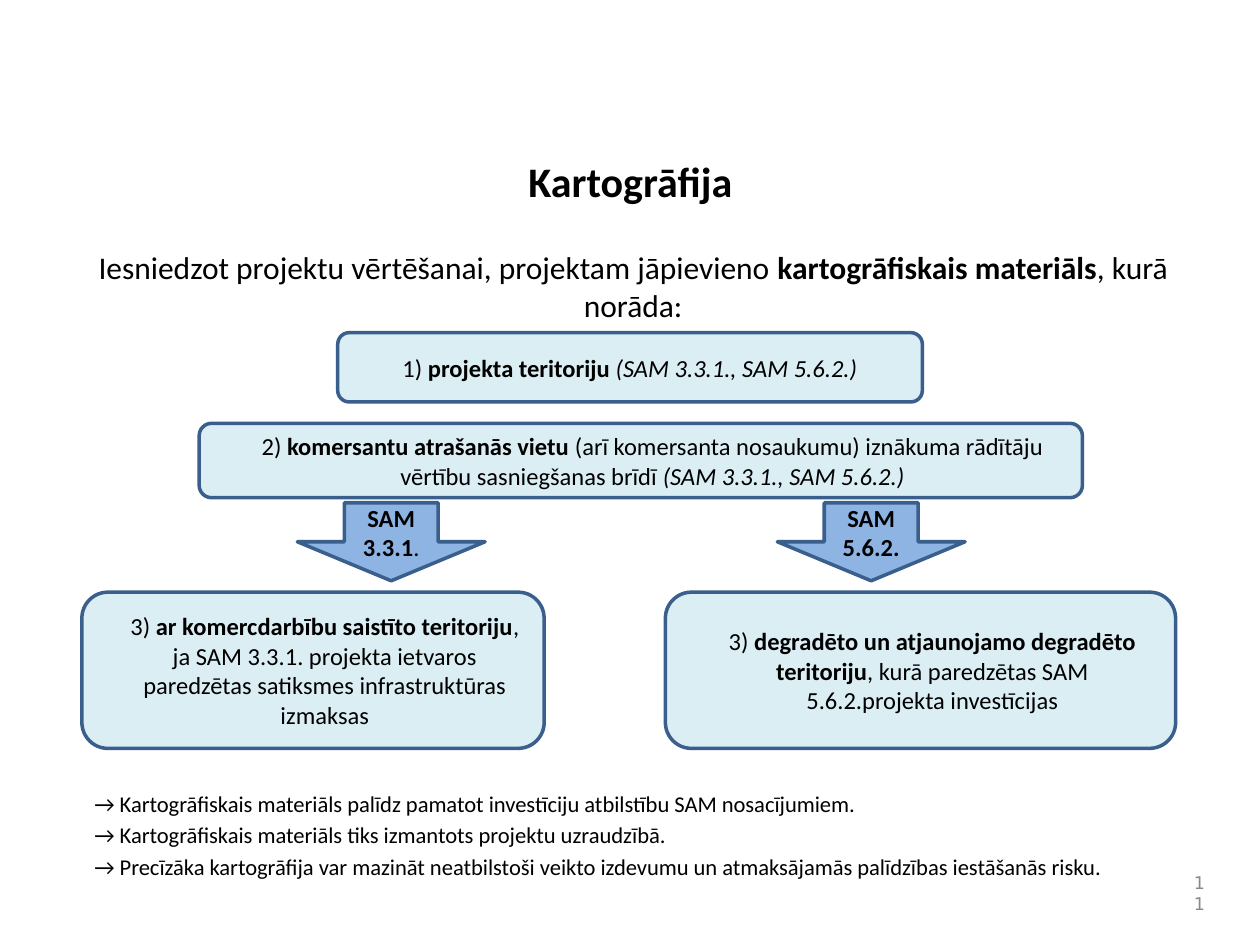
"""Builds the Kartogrāfija slide with its requirement boxes, arrows and notes."""
from pptx import Presentation
from pptx.dml.color import RGBColor
from pptx.enum import shapes, text
from pptx.util import Pt

BLACK, GREY = "000000", "898989"
PALE, BLUE, EDGE = "DBEEF4", "8EB4E3", "3A5F8C"
CENTER, LEFT, RIGHT = text.PP_ALIGN.CENTER, text.PP_ALIGN.LEFT, text.PP_ALIGN.RIGHT
TOP, MIDDLE = text.MSO_ANCHOR.TOP, text.MSO_ANCHOR.MIDDLE
ROUNDED, ARROW = shapes.MSO_SHAPE.ROUNDED_RECTANGLE, shapes.MSO_SHAPE.DOWN_ARROW

TITLE = [[("Kartogrāfija", "b")]]
INTRO = [[
    ("Iesniedzot projektu vērtēšanai, projektam jāpievieno ", ""),
    ("kartogrāfiskais materiāls", "b"),
    (", kurā norāda:", ""),
]]
NOTES = [
    [("→ Kartogrāfiskais materiāls palīdz pamatot investīciju atbilstību SAM nosacījumiem.", "")],
    [("→ Kartogrāfiskais materiāls tiks izmantots projektu uzraudzībā.", "")],
    [("→ Precīzāka kartogrāfija var mazināt neatbilstoši veikto izdevumu un "
      "atmaksājamās palīdzības iestāšanās risku.", "")],
]
NUMBER = [[("11", "")]]

STEP_TOP, STEP_HEIGHT = 338.4, 89.3
ARROW_TOP, ARROW_WIDTH, ARROW_HEIGHT = 287.3, 107.3, 44.6
INDENT = 13.5

STEPS = [
    (ROUNDED, (193, 190.1, 334.1, 39.6), PALE, 0, [
        ("1) ", ""), ("projekta teritoriju ", "b"), ("(SAM 3.3.1., SAM 5.6.2.)", "i")]),
    (ROUNDED, (113.8, 241.9, 504.7, 42.5), PALE, INDENT, [
        ("2) ", ""), ("komersantu atrašanās vietu", "b"),
        (" (arī komersanta nosaukumu) iznākuma rādītāju vērtību sasniegšanas brīdī ", ""),
        ("(SAM 3.3.1., SAM 5.6.2.)", "i")]),
    (ROUNDED, (46.8, STEP_TOP, 264.2, STEP_HEIGHT), PALE, INDENT, [
        ("3) ", ""), ("ar komercdarbību saistīto teritoriju", "b"),
        (", ja SAM 3.3.1. projekta ietvaros paredzētas satiksmes infrastruktūras izmaksas", "")]),
    (ROUNDED, (380.2, STEP_TOP, 291.6, STEP_HEIGHT), PALE, INDENT, [
        ("3) ", ""), ("degradēto un atjaunojamo degradēto teritoriju", "b"),
        (", kurā paredzētas SAM 5.6.2.projekta investīcijas", "")]),
    (ARROW, (169.9, ARROW_TOP, ARROW_WIDTH, ARROW_HEIGHT), BLUE, 0, [
        ("SAM 3.3.1", "b"), (".", "")]),
    (ARROW, (444.2, ARROW_TOP, ARROW_WIDTH, ARROW_HEIGHT), BLUE, 0, [
        ("SAM 5.6.2.", "b")]),
]


def color(value):
    return RGBColor.from_string(value)


def write(box, paragraphs, size, align=CENTER, anchor=MIDDLE, ink=BLACK,
          font="Calibri", indent=0, gap=0):
    frame = box.text_frame
    frame.word_wrap = True
    frame.vertical_anchor = anchor
    for index, spans in enumerate(paragraphs):
        para = frame.add_paragraph() if index else frame.paragraphs[0]
        para.alignment = align
        if indent:
            para._p.get_or_add_pPr().set("marL", str(Pt(indent)))
        if index and gap:
            para.space_before = Pt(gap)
        for words, style in spans:
            span = para.add_run()
            span.text = words
            span.font.name = font
            span.font.size = Pt(size)
            span.font.bold = "b" in style
            span.font.italic = "i" in style
            span.font.color.rgb = color(ink)


def add_text(page, place, paragraphs, size, **options):
    box = page.shapes.add_textbox(*map(Pt, place))
    write(box, paragraphs, size, **options)
    return box


def add_step(page, kind, place, fill, indent, spans):
    box = page.shapes.add_shape(kind, *map(Pt, place))
    box.shadow.inherit = False
    box.fill.solid()
    box.fill.fore_color.rgb = color(fill)
    box.line.color.rgb = color(EDGE)
    box.line.width = Pt(2)
    write(box, [spans], 14, indent=indent)


def main():
    deck = Presentation()
    deck.slide_width, deck.slide_height = Pt(720), Pt(540)
    page = deck.slides.add_slide(deck.slide_layouts[6])
    title = add_text(page, (120.2, 54.7, 480.2, 81.4), TITLE, 24, anchor=TOP)
    title.text_frame.margin_top = Pt(34)
    add_text(page, (39.6, 138.2, 644.4, 383.8), INTRO, 18, anchor=TOP)
    add_text(page, (671.8, 498.2, 23.8, 23.8), NUMBER, 10, align=RIGHT,
             ink=GREY, font="DejaVu Sans")
    for step in STEPS:
        add_step(page, *step)
    add_text(page, (46.8, 447.8, 625, 74.2), NOTES, 12.9, align=LEFT, anchor=TOP, gap=2.5)
    deck.save("out.pptx")


if __name__ == "__main__":
    main()
